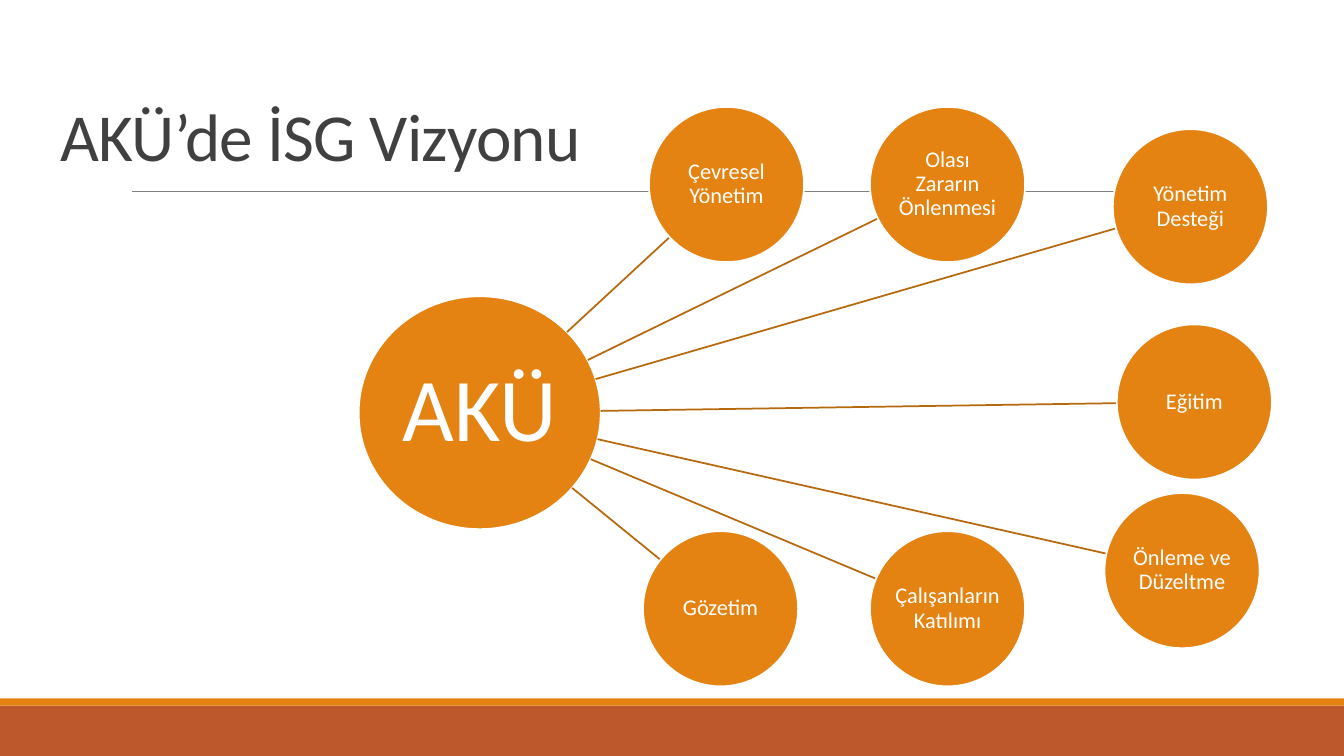
from dataclasses import dataclass
from math import hypot

from lxml.etree import SubElement
from pptx import Presentation
from pptx.dml.color import RGBColor
from pptx.enum.shapes import MSO_CONNECTOR as Connector, MSO_SHAPE as Shape
from pptx.enum.text import MSO_ANCHOR as Anchor, PP_ALIGN as Align
from pptx.oxml.ns import qn
from pptx.util import Cm, Pt


@dataclass(frozen=True)
class Theme:
    font: str = "Calibri"
    background: str = "FFFFFF"
    accent: str = "E48312"
    band: str = "BD582C"
    spoke: str = "B7690E"
    rule: str = "808080"
    title: str = "404040"
    light: str = "FFFFFF"
    title_size: float = 48
    hub_size: float = 64
    node_size: float = 16
    rule_width: float = 0.5
    line_width: float = 1.25


@dataclass(frozen=True)
class Box:
    left: float
    top: float
    width: float
    height: float

    def lengths(self):
        return Cm(self.left), Cm(self.top), Cm(self.width), Cm(self.height)


THEME = Theme()
PAGE = Box(0, 0, 33.87, 19.05)
TITLE_BOX = Box(1.27, 0.86, 29.21, 3.69)
DIAGRAM_BOX = Box(9.04, 2.69, 23.02, 14.61)

# Hub and node centres are measured from the corner of the diagram box
HUB_CENTRE = (3.05, 7.71)
HUB_SIZE = (6.1, 5.87)
NODE_SIZE = (3.91, 3.91)
NODES = [
    ("Olası Zararın Önlenmesi", 14.84, 1.96),
    ("Yönetim Desteği", 20.96, 2.52),
    ("Eğitim", 21.06, 7.44),
    ("Önleme ve Düzeltme", 20.75, 11.69),
    ("Çalışanların Katılımı", 14.84, 12.65),
    ("Gözetim", 9.12, 12.65),
    ("Çevresel Yönetim", 9.27, 1.96),
]


def colour(code):
    return RGBColor.from_string(code)


def write_text(shape, text, size, color, align=Align.LEFT, anchor=Anchor.MIDDLE,
               line_spacing=0.9, margins=(0.25, 0.13), tracking=None):
    frame = shape.text_frame
    frame.word_wrap = True
    frame.vertical_anchor = anchor
    frame.margin_left = frame.margin_right = Cm(margins[0])
    frame.margin_top = frame.margin_bottom = Cm(margins[1])
    paragraph = frame.paragraphs[0]
    paragraph.alignment = align
    paragraph.line_spacing = line_spacing
    run = paragraph.add_run()
    run.text = text
    run.font.name = THEME.font
    run.font.size = Pt(size)
    run.font.color.rgb = colour(color)
    if tracking is not None:
        run.font._element.set("spc", str(round(tracking * 100)))


def add_filled(slide, preset, box, fill, outline=None):
    shape = slide.shapes.add_shape(preset, *box.lengths())
    shape.shadow.inherit = False
    shape.fill.solid()
    shape.fill.fore_color.rgb = colour(fill)
    if outline:
        shape.line.color.rgb = colour(outline)
        shape.line.width = Pt(THEME.line_width)
    else:
        shape.line.fill.background()
    return shape


def add_line(slide, start, end, color, width):
    points = [Cm(value) for value in (*start, *end)]
    line = slide.shapes.add_connector(Connector.STRAIGHT, *points)
    line.line.color.rgb = colour(color)
    line.line.width = Pt(width)
    SubElement(line._element.spPr, qn("a:effectLst"))


def edge_point(centre, size, target):
    """Where the ray from an ellipse's centre to a target leaves the ellipse."""
    dx, dy = target[0] - centre[0], target[1] - centre[1]
    scale = 1 / hypot(2 * dx / size[0], 2 * dy / size[1])
    return centre[0] + dx * scale, centre[1] + dy * scale


def add_circle(slide, centre, size, text, text_size, margin):
    box = Box(centre[0] - size[0] / 2, centre[1] - size[1] / 2, *size)
    circle = add_filled(slide, Shape.OVAL, box, THEME.accent, THEME.light)
    write_text(circle, text, text_size, THEME.light, align=Align.CENTER,
               margins=(margin, margin))


def add_frame(slide, box):
    # Footer bands and the rule under the title
    bottom = box.top + box.height
    band_height, stripe_height = 1.27, 0.18
    band_top = bottom - band_height
    add_filled(slide, Shape.RECTANGLE,
               Box(box.left, band_top, box.width, band_height), THEME.band)
    add_filled(slide, Shape.RECTANGLE,
               Box(box.left, band_top - stripe_height, box.width, stripe_height),
               THEME.accent)
    rule_top = box.top + 4.83
    add_line(slide, (box.left + 3.33, rule_top), (box.left + 31.01, rule_top),
             THEME.rule, THEME.rule_width)


def add_title(slide, box, text):
    title = slide.shapes.add_textbox(*box.lengths())
    write_text(title, text, THEME.title_size, THEME.title, anchor=Anchor.BOTTOM,
               line_spacing=0.85, tracking=-0.5)


def add_diagram(slide, box, hub_text, nodes):
    # Hub, then each spoke with its node
    hub = (box.left + HUB_CENTRE[0], box.top + HUB_CENTRE[1])
    add_circle(slide, hub, HUB_SIZE, hub_text, THEME.hub_size, margin=0.1)
    for text, x, y in nodes:
        node = (box.left + x, box.top + y)
        add_line(slide, edge_point(hub, HUB_SIZE, node),
                 edge_point(node, NODE_SIZE, hub), THEME.spoke, THEME.line_width)
        add_circle(slide, node, NODE_SIZE, text, THEME.node_size, margin=0.03)


def main():
    presentation = Presentation()
    presentation.slide_width = Cm(PAGE.width)
    presentation.slide_height = Cm(PAGE.height)
    slide = presentation.slides.add_slide(presentation.slide_layouts[6])
    slide.background.fill.solid()
    slide.background.fill.fore_color.rgb = colour(THEME.background)
    add_frame(slide, PAGE)
    add_title(slide, TITLE_BOX, "AKÜ’de İSG Vizyonu")
    add_diagram(slide, DIAGRAM_BOX, "AKÜ", NODES)
    presentation.save("out.pptx")


if __name__ == "__main__":
    main()
